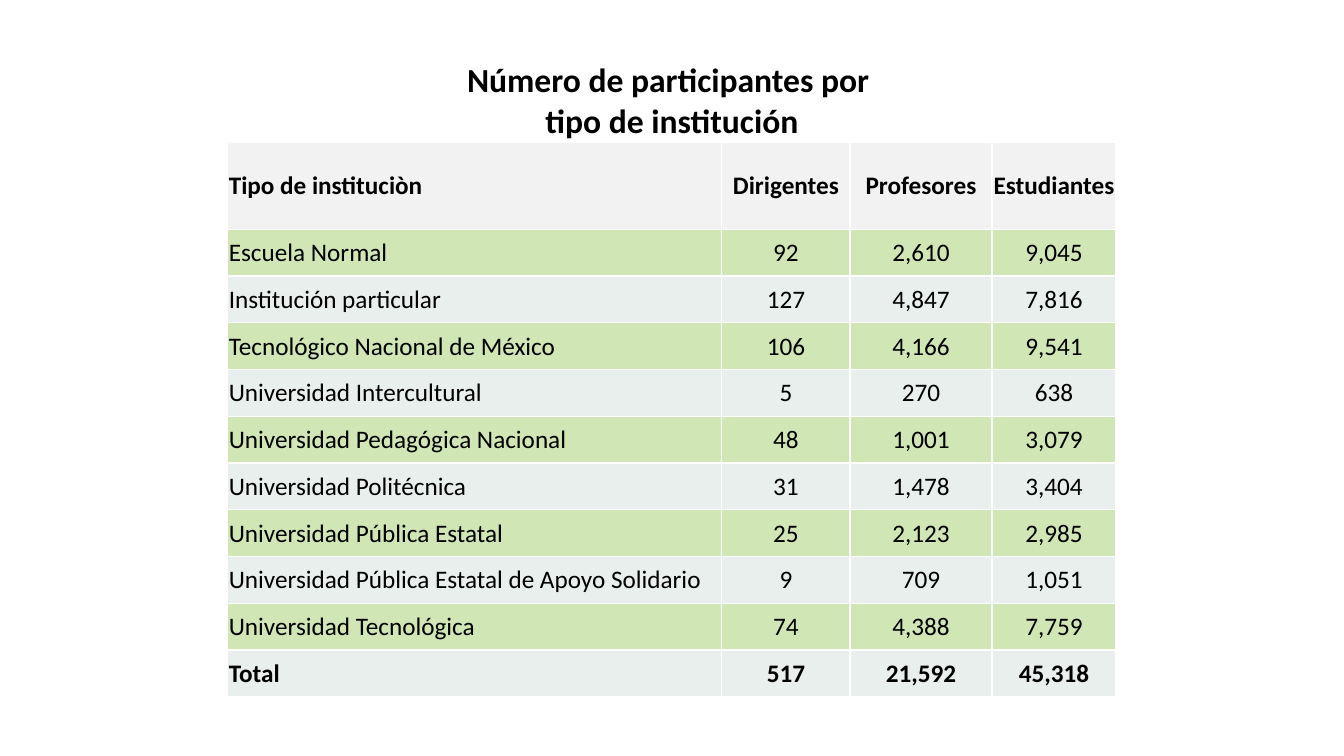
"""Build a slide with a table of participants by type of institution."""
from lxml import etree
from pptx import Presentation
from pptx.dml.color import RGBColor
from pptx.enum.text import MSO_ANCHOR, PP_ALIGN
from pptx.oxml.ns import qn
from pptx.util import Inches, Pt

LEFT, CENTER = PP_ALIGN.LEFT, PP_ALIGN.CENTER
MIDDLE = MSO_ANCHOR.MIDDLE
COLORS = {"text": "000000", "head": "F2F2F2", "green": "D1E6B5",
          "pale": "E8EFEC", "line": "FFFFFF"}
TITLE = "Número de participantes por \ntipo de institución"
ROWS = [
    (TITLE, "", "", ""),
    ("Tipo de instituciòn", "Dirigentes", "Profesores", "Estudiantes"),
    ("Escuela Normal", "92", "2,610", "9,045"),
    ("Institución particular", "127", "4,847", "7,816"),
    ("Tecnológico Nacional de México", "106", "4,166", "9,541"),
    ("Universidad Intercultural", "5", "270", "638"),
    ("Universidad Pedagógica Nacional", "48", "1,001", "3,079"),
    ("Universidad Politécnica", "31", "1,478", "3,404"),
    ("Universidad Pública Estatal", "25", "2,123", "2,985"),
    ("Universidad Pública Estatal de Apoyo Solidario", "9", "709", "1,051"),
    ("Universidad Tecnológica", "74", "4,388", "7,759"),
    ("Total", "517", "21,592", "45,318"),
]
WIDTHS = [4.9, 1.27, 1.41, 1.23]
BODY = len(ROWS) - 2
HEIGHTS = [0.74, 0.86] + [4.64 / BODY] * BODY
CELL = {"margin_left": Inches(0.01), "margin_right": Inches(0.01),
        "margin_top": Inches(0.01), "margin_bottom": 0,
        "vertical_anchor": MIDDLE}


def add_edges(cell):
    props = cell._tc.get_or_add_tcPr()
    for spot, side in enumerate(("lnL", "lnR", "lnT", "lnB")):
        edge = etree.Element(qn(f"a:{side}"), w=str(Pt(1)))
        fill = etree.SubElement(edge, qn("a:solidFill"))
        etree.SubElement(fill, qn("a:srgbClr"), val=COLORS["line"])
        props.insert(spot, edge)


prs = Presentation()
prs.slide_width, prs.slide_height = Inches(13.33), Inches(7.5)
slide = prs.slides.add_slide(prs.slide_layouts[6])
table = slide.shapes.add_table(
    len(ROWS), len(WIDTHS), Inches(2.26), Inches(0.59),
    Inches(sum(WIDTHS)), Inches(sum(HEIGHTS))).table
table.first_row = table.horz_banding = False
for col, width in zip(table.columns, WIDTHS):
    col.width = Inches(width)
for row, height in zip(table.rows, HEIGHTS):
    row.height = Inches(height)
table.cell(0, 0).merge(table.cell(0, len(WIDTHS) - 1))

for r, values in enumerate(ROWS):
    shade = "head" if r == 1 else ("pale" if r % 2 else "green")
    font = {"name": "Calibri", "size": Pt(18 if r else 24),
            "bold": r < 2 or r == len(ROWS) - 1}
    for c, value in enumerate(values):
        cell = table.cell(r, c)
        for key, val in CELL.items():
            setattr(cell, key, val)
        if r:
            cell.fill.solid()
            cell.fill.fore_color.rgb = RGBColor.from_string(COLORS[shade])
        else:
            cell.fill.background()
        add_edges(cell)
        cell.text = value
        for para in cell.text_frame.paragraphs:
            para.alignment = LEFT if r and c == 0 else CENTER
            for run in para.runs:
                for key, val in font.items():
                    setattr(run.font, key, val)
                run.font.color.rgb = RGBColor.from_string(COLORS["text"])

prs.save("out.pptx")
